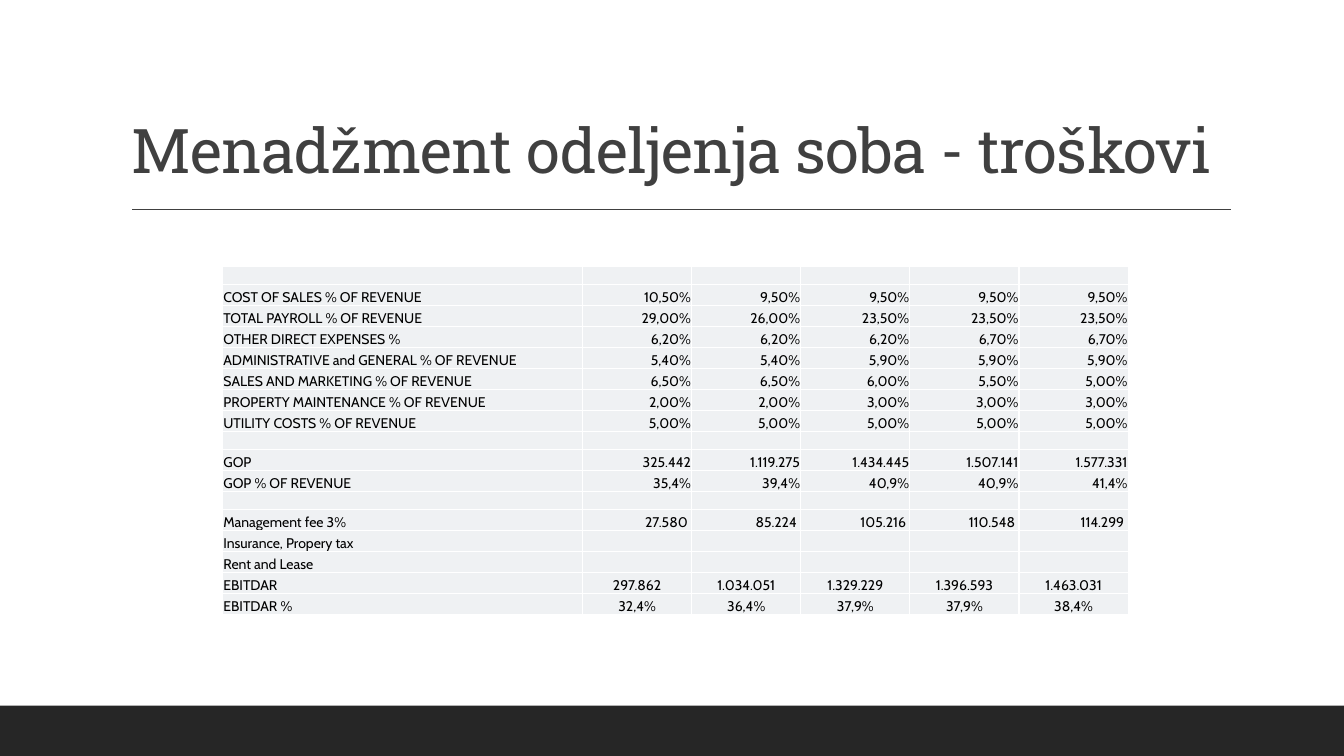
from lxml.etree import SubElement
from pptx import Presentation
from pptx.dml.color import RGBColor
from pptx.enum.shapes import MSO_CONNECTOR, MSO_SHAPE
from pptx.enum.text import MSO_ANCHOR, MSO_AUTO_SIZE, PP_ALIGN
from pptx.oxml.ns import qn
from pptx.util import Cm, Pt

YEARS = 5
LABEL_WIDTH, YEAR_WIDTH = 9.07, 2.75
ROW_HEIGHT, GAP_HEIGHT = 0.53, 0.45
COSTS = [
    ("", ""),
    ("COST OF SALES % OF REVENUE", "10,50% 9,50% 9,50% 9,50% 9,50%"),
    ("TOTAL PAYROLL % OF REVENUE", "29,00% 26,00% 23,50% 23,50% 23,50%"),
    ("OTHER DIRECT EXPENSES %", "6,20% 6,20% 6,20% 6,70% 6,70%"),
    ("ADMINISTRATIVE and GENERAL % OF REVENUE", "5,40% 5,40% 5,90% 5,90% 5,90%"),
    ("SALES AND MARKETING % OF REVENUE", "6,50% 6,50% 6,00% 5,50% 5,00%"),
    ("PROPERTY MAINTENANCE % OF REVENUE", "2,00% 2,00% 3,00% 3,00% 3,00%"),
    ("UTILITY COSTS % OF REVENUE", "5,00% 5,00% 5,00% 5,00% 5,00%"),
    ("", ""),
    ("GOP", "325.442 1.119.275 1.434.445 1.507.141 1.577.331"),
    ("GOP % OF REVENUE", "35,4% 39,4% 40,9% 40,9% 41,4%"),
    ("", ""),
    ("Management fee 3%", "27.580 85.224 105.216 110.548 114.299"),
    ("Insurance, Propery tax", ""),
    ("Rent and Lease", ""),
    ("EBITDAR", "297.862 1.034.051 1.329.229 1.396.593 1.463.031"),
    ("EBITDAR %", "32,4% 36,4% 37,9% 37,9% 38,4%"),
]


def rgb(code):
    return RGBColor.from_string(code)


def style_font(font, name, size, color):
    font.name = name
    font.size = Pt(size)
    font.color.rgb = rgb(color)


def add_title(slide, wording):
    title = slide.shapes.title
    title.left, title.top, title.width, title.height = Cm(3.05), Cm(0.79), Cm(27.94), Cm(4.04)
    frame = title.text_frame
    frame.text = wording
    frame.auto_size = MSO_AUTO_SIZE.NONE
    frame.vertical_anchor = MSO_ANCHOR.BOTTOM
    heading = frame.paragraphs[0]
    heading.alignment = PP_ALIGN.LEFT
    heading.line_spacing = 0.9
    run = heading.runs[0]
    style_font(run.font, "Roboto Slab", 44, "404040")
    run.font._element.set("spc", "-50")


def add_footer_band(slide, width):
    band = slide.shapes.add_shape(MSO_SHAPE.RECTANGLE, 0, Cm(17.78), width, Cm(1.27))
    band.shadow.inherit = False
    band.fill.solid()
    band.fill.fore_color.rgb = rgb("262626")
    band.line.fill.background()


def add_title_rule(slide):
    rule = slide.shapes.add_connector(MSO_CONNECTOR.STRAIGHT, Cm(3.33), Cm(5.28), Cm(31.01), Cm(5.28))
    rule.line.color.rgb = rgb("404040")
    rule.line.width = Pt(1)
    SubElement(rule._element.spPr, qn("a:effectLst"))


def add_cell_borders(cell, color):
    properties = cell._tc.get_or_add_tcPr()
    for side in ("lnL", "lnR", "lnT", "lnB"):
        border = SubElement(properties, qn(f"a:{side}"), w=str(Pt(1)))
        paint = SubElement(border, qn("a:solidFill"))
        SubElement(paint, qn("a:srgbClr"), val=color)


def fill_cell(cell, wording, alignment, right_margin):
    add_cell_borders(cell, "FFFFFF")
    cell.fill.solid()
    cell.fill.fore_color.rgb = rgb("EFF1F3")
    cell.vertical_anchor = MSO_ANCHOR.BOTTOM
    cell.margin_left = cell.margin_top = Cm(0.02)
    cell.margin_right, cell.margin_bottom = Cm(right_margin), 0
    entry = cell.text_frame.paragraphs[0]
    entry.alignment = alignment
    if wording:
        entry.text = wording
        style_font(entry.runs[0].font, "Cabin", 10, "000000")
    else:
        SubElement(entry._p, qn("a:endParaRPr"), sz="800")


def add_cost_table(slide):
    heights = [ROW_HEIGHT if label else GAP_HEIGHT for label, _ in COSTS]
    widths = [LABEL_WIDTH] + [YEAR_WIDTH] * YEARS
    table = slide.shapes.add_table(
        len(COSTS), len(widths), Cm(5.61), Cm(6.72), Cm(sum(widths)), Cm(sum(heights))
    ).table
    table.first_row = table.horz_banding = False
    for column, width in zip(table.columns, widths):
        column.width = Cm(width)
    for row, height, (label, figures) in zip(table.rows, heights, COSTS):
        row.height = Cm(height)
        values = figures.split() or [""] * YEARS
        alignment = PP_ALIGN.CENTER if label.startswith("EBITDAR") else PP_ALIGN.RIGHT
        right_margin = 0.1 if label.startswith("Management") else 0.02
        fill_cell(row.cells[0], label, PP_ALIGN.LEFT, 0.02)
        for year, value in enumerate(values, start=1):
            fill_cell(row.cells[year], value, alignment, right_margin)


def main():
    """Build the slide on room department costs and save it."""
    deck = Presentation()
    deck.slide_width, deck.slide_height = Cm(33.87), Cm(19.05)
    slide = deck.slides.add_slide(deck.slide_layouts[5])
    add_footer_band(slide, deck.slide_width)
    add_title_rule(slide)
    add_title(slide, "Menadžment odeljenja soba - troškovi")
    add_cost_table(slide)
    deck.save("out.pptx")


if __name__ == "__main__":
    main()
